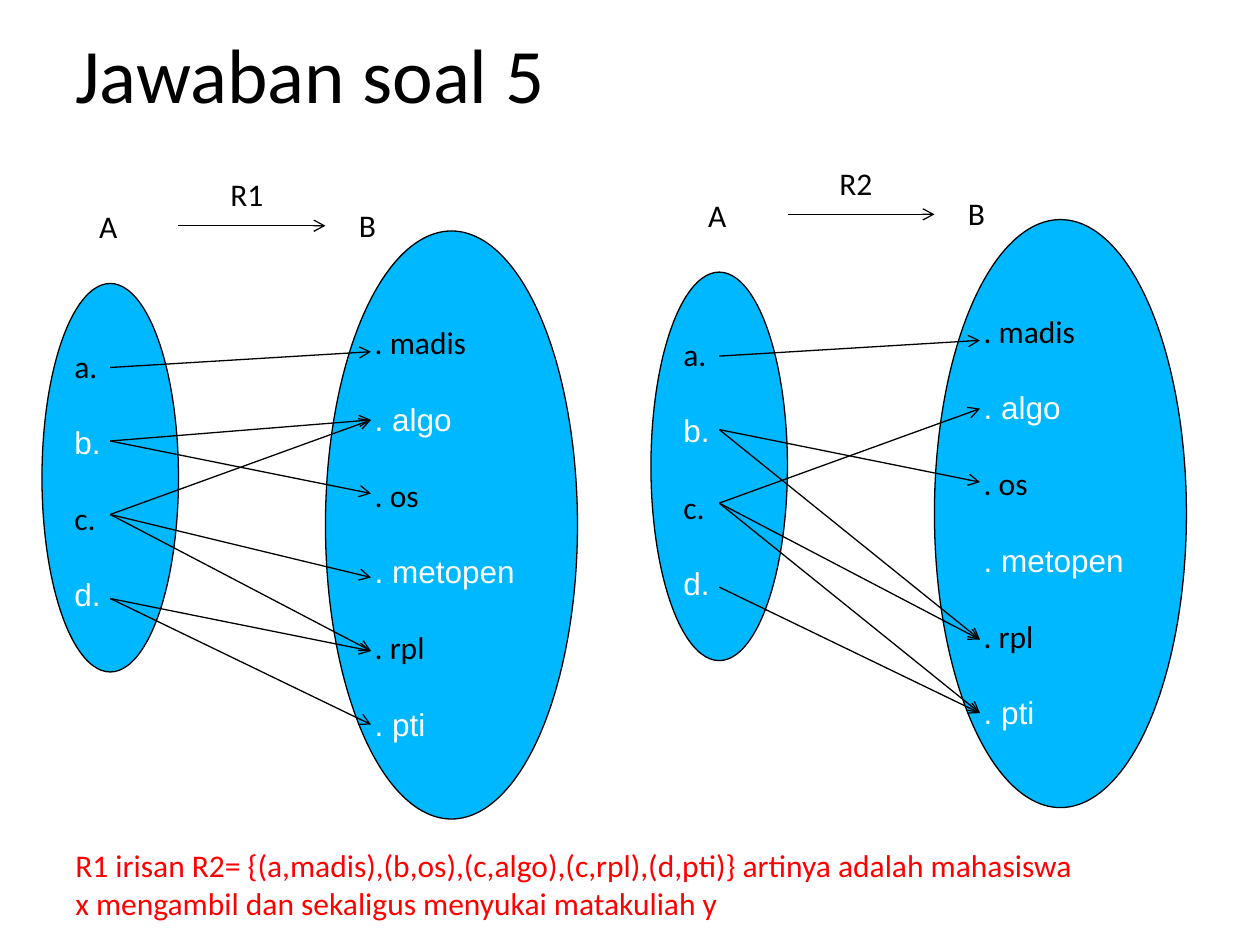
from dataclasses import dataclass

from lxml import etree
from pptx import Presentation
from pptx.dml.color import RGBColor
from pptx.enum.shapes import MSO_CONNECTOR, MSO_SHAPE
from pptx.enum.text import MSO_ANCHOR, PP_ALIGN
from pptx.oxml.ns import qn
from pptx.util import Pt

LINE = MSO_CONNECTOR.STRAIGHT
OVAL = MSO_SHAPE.OVAL
LEFT = PP_ALIGN.LEFT
TOP, MIDDLE = MSO_ANCHOR.TOP, MSO_ANCHOR.MIDDLE


@dataclass(frozen=True)
class Theme:
    black: RGBColor = RGBColor(0, 0, 0)
    white: RGBColor = RGBColor(255, 255, 255)
    red: RGBColor = RGBColor(255, 0, 0)
    blue: RGBColor = RGBColor(0, 0xB8, 0xFF)
    main: str = "Calibri"
    other: str = "Arial"
    title: float = 44
    body: float = 18
    rule: float = 0.75
    gap: float = 22


class Pen:
    def __init__(self, slide, theme):
        self.slide, self.theme = slide, theme
        self.shapes = slide.shapes
        self.dx = self.dy = 0

    def group(self, dx, dy):
        """Draw what follows in a new group, shifted by dx and dy."""
        self.shapes = self.slide.shapes.add_group_shape().shapes
        self.dx, self.dy = dx, dy

    def ungroup(self):
        self.shapes = self.slide.shapes
        self.dx = self.dy = 0

    def spot(self, x, y):
        return Pt(x + self.dx), Pt(y + self.dy)

    def style(self, para, color, font=None, size=None):
        para.alignment = LEFT
        para.font.name = font or self.theme.main
        para.font.size = Pt(size or self.theme.body)
        para.font.color.rgb = color

    def text(self, x, y, w, h, words, color=None, size=None, anchor=TOP):
        box = self.shapes.add_textbox(*self.spot(x, y), Pt(w), Pt(h))
        frame = box.text_frame
        frame.word_wrap = True
        frame.vertical_anchor = anchor
        frame.text = words
        for para in frame.paragraphs:
            self.style(para, color or self.theme.black, size=size)

    def oval(self, x, y, w, h, items):
        """Draw a set whose members alternate between two text styles."""
        look = self.theme
        shape = self.shapes.add_shape(OVAL, *self.spot(x, y), Pt(w), Pt(h))
        shape.shadow.inherit = False
        shape.fill.solid()
        shape.fill.fore_color.rgb = look.blue
        shape.line.color.rgb = look.black
        shape.line.width = Pt(look.rule)
        frame = shape.text_frame
        frame.vertical_anchor = TOP
        frame.text = "\n".join(items)
        pairs = (look.black, look.main), (look.white, look.other)
        for i, para in enumerate(frame.paragraphs):
            self.style(para, *pairs[i % 2])
            if i:
                para.space_before = Pt(look.gap)

    def arrow(self, x1, y1, x2, y2):
        line = self.shapes.add_connector(
            LINE, *self.spot(x1, y1), *self.spot(x2, y2))
        line.line.color.rgb = self.theme.black
        line.line.width = Pt(self.theme.rule)
        props = line._element.spPr
        etree.SubElement(props.find(qn("a:ln")), qn("a:tailEnd"), type="arrow")
        etree.SubElement(props, qn("a:effectLst"))


PEOPLE = {"a": 210, "b": 252, "c": 294, "d": 342}
COURSES = {"madis": 201, "algo": 240, "os": 282,
           "metopen": 330, "rpl": 372, "pti": 414}
R1 = {"a": ["madis"], "b": ["algo", "os"],
      "c": ["algo", "metopen", "rpl"], "d": ["rpl", "pti"]}
R2 = {"a": ["madis"], "b": ["rpl", "os"],
      "c": ["algo", "pti", "rpl"], "d": ["pti"]}


def relate(pen, name, links):
    """Draw one relation from set A to set B."""
    pen.text(124.5, 96.5, 37.5, 29, name)
    pen.oval(24, 162, 78, 222, [f"{who}." for who in PEOPLE])
    pen.oval(186, 132, 144, 336, [f". {what}" for what in COURSES])
    pen.text(49.5, 115, 27, 29, "A")
    pen.text(198, 114, 27, 29, "B")
    pen.arrow(102, 129, 186, 129)
    for who, picks in links.items():
        for what in picks:
            pen.arrow(63, PEOPLE[who], 212, COURSES[what])


def main():
    deck = Presentation()
    deck.slide_width, deck.slide_height = Pt(720), Pt(540)
    theme = Theme()
    pen = Pen(deck.slides.add_slide(deck.slide_layouts[6]), theme)

    pen.text(36, -1.5, 648, 86, "Jawaban soal 5",
             size=theme.title, anchor=MIDDLE)
    pen.group(0, 0)
    relate(pen, "R1", R1)
    pen.group(348, -6.5)
    relate(pen, "R2", R2)
    pen.ungroup()
    pen.text(36, 480, 596, 51,
             "R1 irisan R2= {(a,madis),(b,os),(c,algo),(c,rpl),(d,pti)} "
             "artinya adalah mahasiswa\n"
             "x mengambil dan sekaligus menyukai matakuliah y", theme.red)
    deck.save("out.pptx")


if __name__ == "__main__":
    main()
